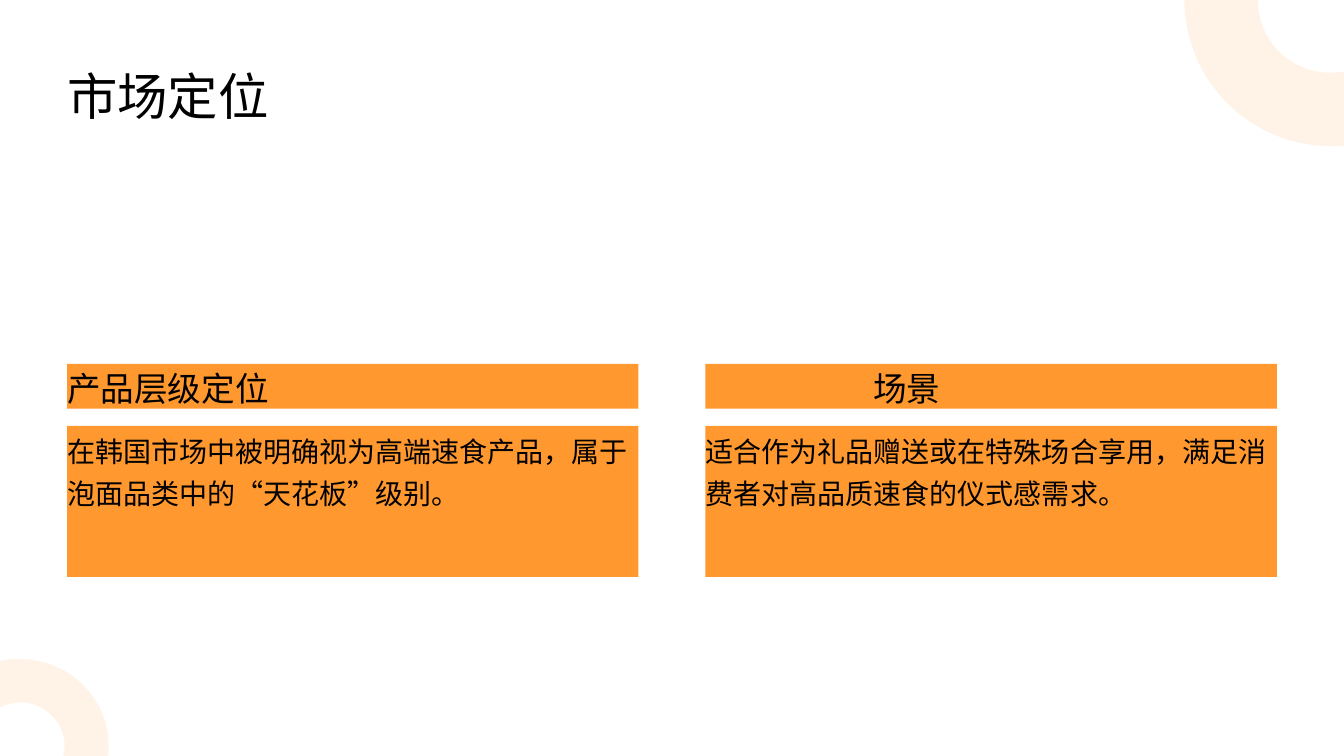
from lxml import etree
from pptx import Presentation
from pptx.dml.color import RGBColor
from pptx.enum.lang import MSO_LANGUAGE_ID as LANG
from pptx.enum.shapes import MSO_SHAPE as SHAPE
from pptx.enum.text import MSO_ANCHOR as ANCHOR, PP_ALIGN as ALIGN
from pptx.oxml.ns import qn
from pptx.util import Cm, Pt

TITLE = "市场定位"
CARDS = [
    ("产品层级定位", 4.23 * 0, "在韩国市场中被明确视为高端速食产品，属于泡面品类中的“天花板”级别。"),
    ("场景", 4.23, "适合作为礼品赠送或在特殊场合享用，满足消费者对高品质速食的仪式感需求。"),
]
ORANGE, BLACK, FONT = "FF982E", "000000", "Arial"
SLIDE_W, SLIDE_H = 33.87, 19.05
MARGIN, GAP = 1.69, 1.69
CARD_W = (SLIDE_W - 2 * MARGIN - GAP) / 2
HEAD_TOP, HEAD_H = 9.17, 1.13
BODY_TOP, BODY_H = 10.73, 3.81
RINGS = [
    [
        [(0.51, 16.61)],
        [(1.75, 16.61), (2.74, 17.6), (2.74, 18.8)],
        [(2.74, 18.87), (2.74, 18.95), (2.74, 19.02)],
        [(2.72, SLIDE_H)],
        [(1.6, SLIDE_H)],
        [(1.6, 19.02)],
        [(1.63, 18.95), (1.63, 18.87), (1.63, 18.8)],
        [(1.63, 18.19), (1.12, 17.7), (0.51, 17.7)],
        [(0.33, 17.7), (0.18, 17.75), (0.03, 17.81)],
        [(0, 17.83)],
        [(0, 16.66)],
        [(0.18, 16.61), (0.33, 16.61), (0.51, 16.61)],
    ],
    [
        [(29.85, 0)],
        [(31.7, 0)],
        [(31.7, 1.02), (32.51, 1.83), (33.53, 1.83)],
        [(33.66, 1.83), (33.76, 1.83), (SLIDE_W, 1.8)],
        [(SLIDE_W, 3.66)],
        [(33.81, 3.68)],
        [(33.73, 3.68), (33.63, 3.68), (33.53, 3.68)],
        [(31.5, 3.68), (29.85, 2.03), (29.85, 0)],
    ],
]


def rgb(code):
    return RGBColor.from_string(code)


def paint(sp, color, opacity=100):
    sp.shadow.inherit = False
    sp.fill.solid()
    sp.fill.fore_color.rgb = rgb(color)
    sp.line.fill.background()
    if opacity < 100:
        clr = sp._element.spPr.find(qn("a:solidFill"))[0]
        etree.SubElement(clr, qn("a:alpha")).set("val", str(opacity * 1000))


def write(sp, text, size, spacing, indent=0):
    tf = sp.text_frame
    tf.text = text
    tf.word_wrap = True
    tf.vertical_anchor = ANCHOR.TOP
    tf.margin_left = Cm(indent)
    tf.margin_top = tf.margin_right = tf.margin_bottom = 0
    p = tf.paragraphs[0]
    p.alignment = ALIGN.LEFT
    p.line_spacing = spacing
    font = p.runs[0].font
    font.size, font.name, font.color.rgb = Pt(size), FONT, rgb(BLACK)
    font.language_id = LANG.SIMPLIFIED_CHINESE


def add_panel(slide, box, text, size, spacing, indent=0):
    sp = slide.shapes.add_shape(SHAPE.RECTANGLE, *map(Cm, box))
    paint(sp, ORANGE)
    write(sp, text, size, spacing, indent)


def add_ring(slide, steps):
    """Draw a closed outline whose three-point steps are Bezier curves."""
    start, *rest = [(Cm(x), Cm(y)) for step in steps for x, y in step]
    fb = slide.shapes.build_freeform(*start)
    fb.add_line_segments(rest, close=True)
    sp = fb.convert_to_shape()
    lines = iter(list(sp._element.iter(qn("a:lnTo"))))
    for step in steps[1:]:
        group = [next(lines) for _ in step]
        if len(group) == 3:
            curve = etree.Element(qn("a:cubicBezTo"))
            group[0].addprevious(curve)
            for line in group:
                curve.append(line[0])
                line.getparent().remove(line)
    paint(sp, ORANGE, 11)


def main():
    prs = Presentation()
    prs.slide_width, prs.slide_height = Cm(SLIDE_W), Cm(SLIDE_H)
    slide = prs.slides.add_slide(prs.slide_layouts[6])
    for ring in RINGS:
        add_ring(slide, ring)
    for i, (head, indent, body) in enumerate(CARDS):
        left = MARGIN + i * (CARD_W + GAP)
        add_panel(slide, (left, BODY_TOP, CARD_W, BODY_H), body, 20, 1.25)
        add_panel(slide, (left, HEAD_TOP, CARD_W, HEAD_H), head, 24, 1.11, indent)
    title = slide.shapes.add_textbox(Cm(MARGIN), Cm(1.48), Cm(SLIDE_W - 2 * MARGIN), Cm(1.69))
    write(title, TITLE, 36, 1.11)
    prs.save("out.pptx")


if __name__ == "__main__":
    main()
